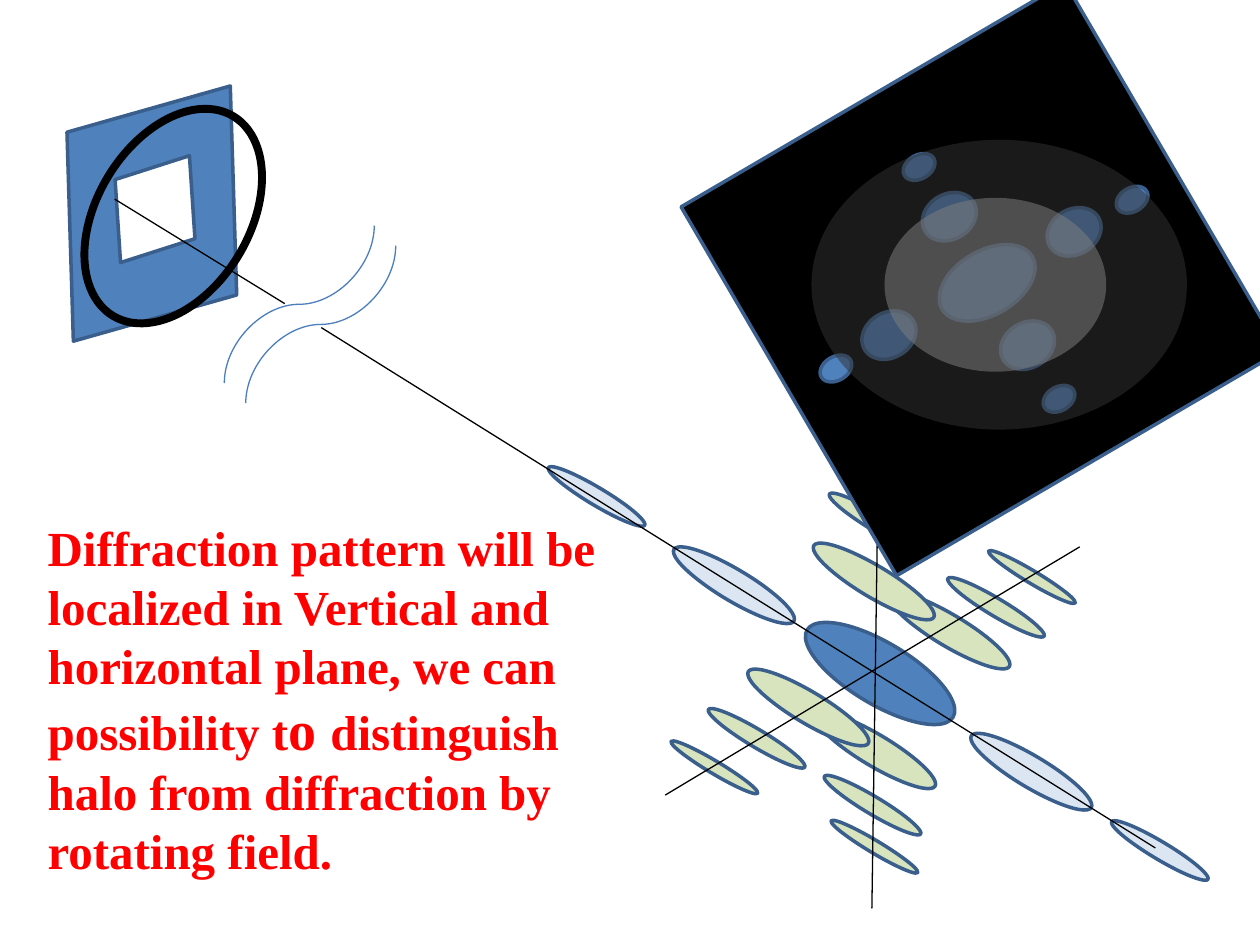
import pptx
import pptx.util
from pptx.dml.color import RGBColor
from pptx.enum.shapes import MSO_CONNECTOR, MSO_SHAPE
from pptx.oxml.ns import qn
from lxml import etree

Inches, Pt = pptx.util.Inches, pptx.util.Pt
BLUE, GREEN, PALE, EDGE = "4F81BD", "D7E4BD", "DCE6F2", "3A5F8C"
BEAM, SCREEN = 30.9, 329.7  # rotation of the beam spots and of the screen


def color(fmt, value):
    """Give a fill, line or font format a solid hex colour."""
    if hasattr(fmt, "solid"):
        fmt.solid()
        fmt = fmt.fore_color
    else:
        fmt = fmt.color
    fmt.rgb = RGBColor.from_string(value)


def add_part(shapes, kind, at, rot=0, fill=None, line=EDGE, width=2, alpha=None):
    sp = shapes.add_shape(kind, *[Inches(v) for v in at])
    sp.rotation = rot
    sp.shadow.inherit = False
    if fill:
        color(sp.fill, fill)
    else:
        sp.fill.background()
    if line:
        color(sp.line, line)
        sp.line.width = Pt(width)
    else:
        sp.line.fill.background()
    if alpha:
        clr = sp._element.spPr.find(qn("a:solidFill"))[0]
        etree.SubElement(clr, qn("a:alpha")).set("val", str(alpha * 1000))


prs = pptx.Presentation()
prs.slide_width, prs.slide_height = Inches(10), Inches(7.5)
s = prs.slides.add_slide(prs.slide_layouts[6])
OVAL, PLATE = MSO_SHAPE.OVAL, MSO_SHAPE.PARALLELOGRAM

# Central spots of the beam
beam = s.shapes.add_group_shape().shapes
add_part(beam, OVAL, (6.98, 4.88, 1.11, 0.25), BEAM, GREEN)
add_part(beam, OVAL, (6.31, 5.1, 1.35, 0.49), BEAM, BLUE)

# Plate with square aperture and ring
add_part(beam, PLATE, (0.33, 0.89, 1.75, 1.61), 164.2, BLUE)
add_part(beam, PLATE, (0.84, 1.34, 0.78, 0.64), 162.2, "FFFFFF")
add_part(beam, OVAL, (0.77, 0.79, 1.21, 1.85), 31.1, None, "000000", 4.5)

# Diffraction spots along the three axes: size, fill, left-top corners
spots = [
    ((1.11, 0.25), GREEN, [(6.39, 5.83), (6.38, 4.49), (5.86, 5.49)]),
    ((0.89, 0.14), GREEN, [(5.56, 5.79), (6.52, 4.08), (7.46, 4.75), (6.48, 6.32)]),
    ((1.11, 0.25), PALE, [(5.27, 4.52), (7.63, 6)]),
    ((0.89, 0.14), PALE, [(4.29, 3.87), (8.76, 6.68)]),
    ((0.8, 0.1), GREEN, [(6.55, 3.67), (5.27, 6.04), (7.79, 4.53), (6.54, 6.67)]),
]
for size, fill, corners in spots:
    for corner in corners:
        add_part(beam, OVAL, corner + size, BEAM, fill)

# Axes, the two break curves (turned a quarter) and the beam start
STRAIGHT, CURVE = MSO_CONNECTOR.STRAIGHT, MSO_CONNECTOR.CURVE
lines = [
    (STRAIGHT, (6.98, 3.06, 6.92, 7.21), "000000"),
    (STRAIGHT, (5.28, 6.31, 8.57, 4.34), "000000"),
    (STRAIGHT, (2.55, 2.6, 9.17, 6.73), "000000"),
    (CURVE, (3, 3.01, 1.75, 1.82), "4B7EBC"),
    (CURVE, (3.17, 3.17, 1.92, 1.98), "4B7EBC"),
    (STRAIGHT, (2.26, 2.41, 0.91, 1.58), "000000"),
]
for kind, ends, hue in lines:
    c = beam.add_connector(kind, *[Inches(v) for v in ends])
    color(c.line.fill, hue)
    c.line.width = Pt(0.75)
    spPr = c._element.spPr
    etree.SubElement(spPr, qn("a:effectLst"))
    if kind == CURVE:
        spPr.find(qn("a:xfrm")).set("rot", str(90 * 60000))

# Explanation
tb = s.shapes.add_textbox(Inches(0.28), Inches(4.06), Inches(4.57), Inches(3))
tf = tb.text_frame
tf.word_wrap = True
p = tf.paragraphs[0]
runs = [
    ("Diffraction pattern will be localized in Vertical and "
     "horizontal plane, we can possibility t", 28),
    ("o ", 32),
    ("distinguish halo from diffraction by rotating field.", 28),
]
for text, size in runs:
    r = p.add_run()
    r.text = text
    r.font.name = "Times New Roman"
    r.font.size = Pt(size)
    r.font.bold = True
    color(r.font, "FF0000") if not hasattr(r.font, "solid") else None

# Screen with the diffraction pattern
screen = s.shapes.add_group_shape().shapes
add_part(screen, MSO_SHAPE.RECTANGLE, (6.02, 0.52, 3.53, 3.39), SCREEN, "000000")
pattern = [
    ((0.83, 0.51), [(7.42, 1.99)]),
    ((0.45, 0.36), [(6.83, 2.48), (8.3, 1.66), (7.31, 1.54), (7.93, 2.56)]),
    ((0.27, 0.19), [(8.27, 3.07), (6.5, 2.83), (8.85, 1.49), (7.16, 1.23)]),
]
for size, corners in pattern:
    for corner in corners:
        add_part(screen, OVAL, corner + size, SCREEN, BLUE)

# Translucent halo
add_part(screen, OVAL, (6.44, 1.11, 2.98, 2.3), 0, "333333", None, alpha=52)
add_part(screen, OVAL, (7.02, 1.57, 1.76, 1.38), 0, "808080", None, alpha=51)

prs.save("out.pptx")
